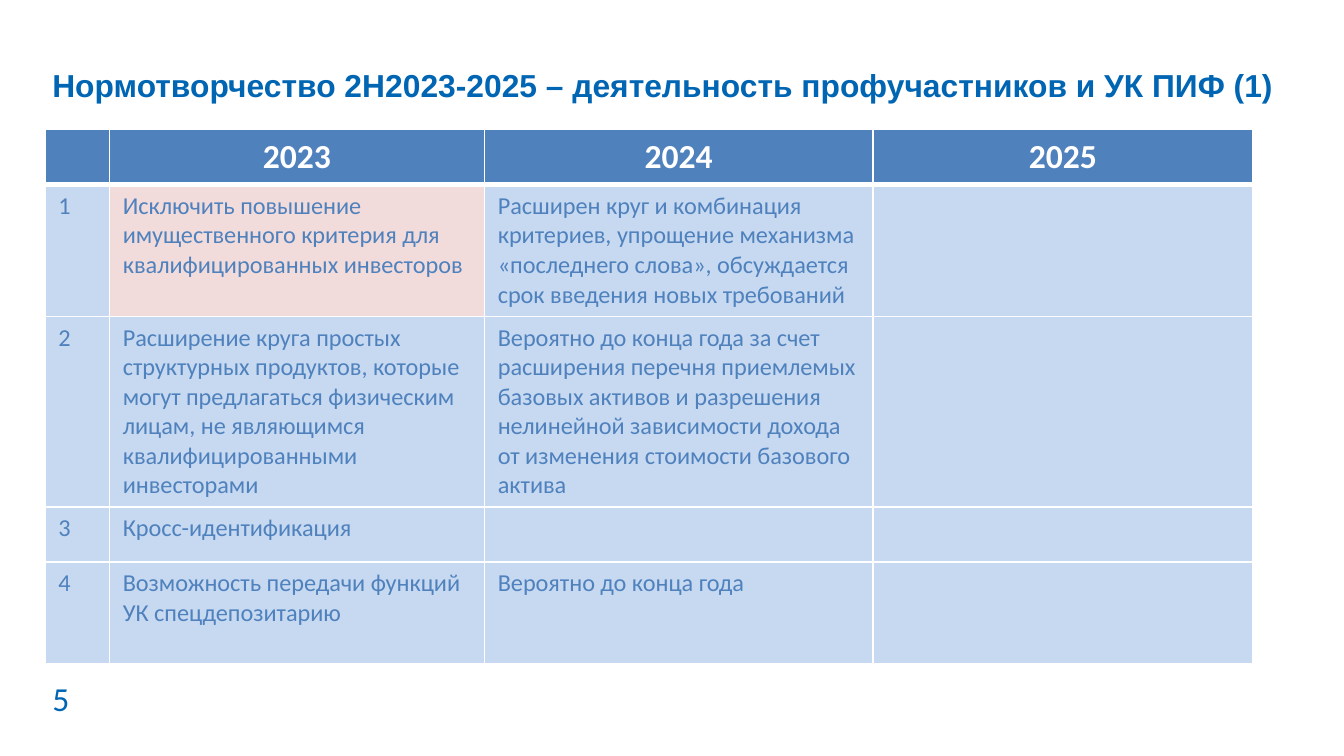
import pptx
import pptx.util
import pptx.dml.color
import pptx.enum.text
import pptx.oxml
import pptx.oxml.ns

Pt = pptx.util.Pt
ALIGN = pptx.enum.text.PP_ALIGN
COLORS = {"brand": "0065B2", "head": "4F81BD", "body": "C6D9F1",
          "alert": "F2DCDB", "white": "FFFFFF"}
WIDTHS = [34.6, 200.9, 208.1, 203.7]
HEIGHTS = [29.5, 70.6, 102.2, 29.5, 54.7]
ROWS = [
    ["", "2023", "2024", "2025"],
    ["1", "Исключить повышение имущественного критерия для квалифицированных инвесторов",
     "Расширен круг и комбинация критериев, упрощение механизма «последнего слова», "
     "обсуждается срок введения новых требований", ""],
    ["2", "Расширение круга простых структурных продуктов, которые могут предлагаться "
     "физическим лицам, не являющимся квалифицированными инвесторами",
     "Вероятно до конца года за счет расширения перечня приемлемых базовых активов и "
     "разрешения нелинейной зависимости дохода от изменения стоимости базового актива", ""],
    ["3", "Кросс-идентификация", "", ""],
    ["4", "Возможность передачи функций УК спецдепозитарию", "Вероятно до конца года", ""],
]
ALERT = (1, 1)


def color(name):
    return pptx.dml.color.RGBColor.from_string(COLORS[name])


def write(frame, text, size=18, font="Calibri", ink="brand", bold=False,
          align=ALIGN.LEFT, line=None):
    para = frame.paragraphs[0]
    para.alignment = align
    if line:
        para.line_spacing = Pt(line)
    run = para.add_run()
    run.text = text
    run.font.size = Pt(size)
    run.font.name = font
    run.font.bold = bold
    run.font.color.rgb = color(ink)


def label(slide, box, text, **style):
    frame = slide.shapes.add_textbox(*map(Pt, box)).text_frame
    frame.word_wrap = True
    frame.margin_left = frame.margin_right = 0
    frame.margin_top = frame.margin_bottom = 0
    write(frame, text, **style)


def border(cell, sides):
    props = cell._tc.get_or_add_tcPr()
    for at, (side, width) in enumerate(sides.items()):
        line = pptx.oxml.parse_xml(
            f'<a:{side} {pptx.oxml.ns.nsdecls("a")} w="{Pt(width)}"><a:solidFill>'
            f'<a:srgbClr val="{COLORS["white"]}"/></a:solidFill></a:{side}>')
        props.insert(at, line)


def grid(slide, left, top):
    table = slide.shapes.add_table(len(ROWS), len(WIDTHS), Pt(left), Pt(top),
                                   Pt(sum(WIDTHS)), Pt(sum(HEIGHTS))).table
    for col, width in zip(table.columns, WIDTHS):
        col.width = Pt(width)
    for row, height in zip(table.rows, HEIGHTS):
        row.height = Pt(height)
    for r, texts in enumerate(ROWS):
        style = (dict(size=13, ink="head") if r else
                 dict(ink="white", bold=True, align=ALIGN.CENTER))
        for c, text in enumerate(texts):
            cell = table.cell(r, c)
            fill = "alert" if (r, c) == ALERT else "body" if r else "head"
            cell.fill.solid()
            cell.fill.fore_color.rgb = color(fill)
            border(cell, {"lnL": 1, "lnR": 1, "lnT": 3 if r == 1 else 1,
                          "lnB": 1 if r else 3})
            if text:
                write(cell.text_frame, text, **style)


def main():
    deck = pptx.Presentation()
    deck.slide_width, deck.slide_height = Pt(720), Pt(405)
    slide = deck.slides.add_slide(deck.slide_layouts[6])
    label(slide, (28, 363, 168, 20), "5")
    label(slide, (28, 27.4, 658, 26.6),
          "Нормотворчество 2H2023-2025 – деятельность профучастников и УК ПИФ (1)",
          size=17, font="Arial", bold=True, line=28)
    grid(slide, 24, 69.4)
    deck.save("out.pptx")


if __name__ == "__main__":
    main()
